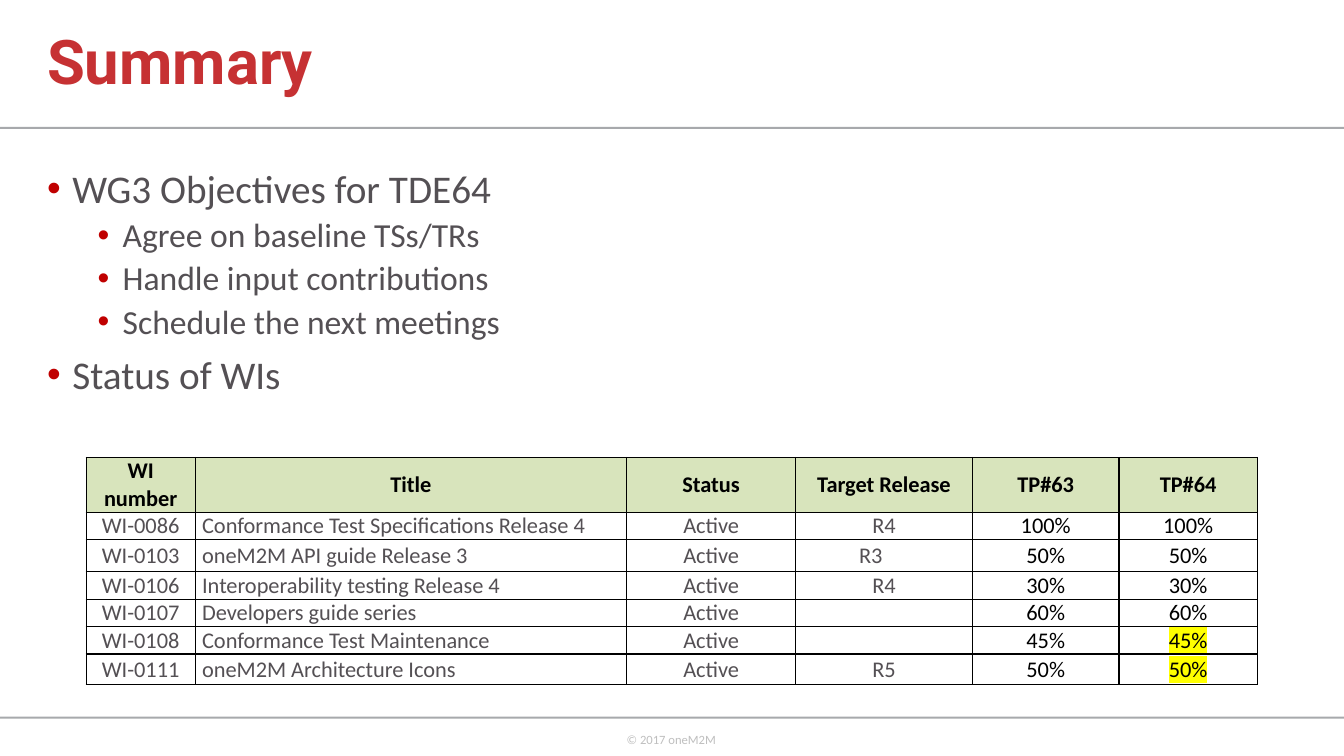
from dataclasses import dataclass

from lxml.etree import SubElement
from pptx import Presentation
from pptx.dml.color import RGBColor
from pptx.enum.shapes import MSO_SHAPE as Preset
from pptx.enum.text import MSO_ANCHOR as Anchor, PP_ALIGN as Align
from pptx.oxml import parse_xml
from pptx.oxml.ns import nsdecls, qn
from pptx.util import Pt

COLORS = {
    "rule": "A7A9AC", "footer": "BFBFBF", "title": "C63133", "text": "545054",
    "bullet": "C00000", "header": "D8E4BC", "white": "FFFFFF",
    "black": "000000", "highlight": "FFFF00",
}
SLIDE_WIDTH, SLIDE_HEIGHT = 960, 540


@dataclass
class Style:
    size: float
    color: str
    name: str = "Calibri"
    bold: bool = False
    highlight: bool = False


@dataclass
class Bullet:
    text: str
    level: int = 0


@dataclass
class WorkItem:
    number: str
    title: str
    release: str
    before: str
    after: str
    height: float = 19.6
    changed: bool = False
    release_shift: float = 0


BULLETS = [
    Bullet("WG3 Objectives for TDE64"),
    Bullet("Agree on baseline TSs/TRs", 1),
    Bullet("Handle input contributions", 1),
    Bullet("Schedule the next meetings", 1),
    Bullet("Status of WIs"),
]
HEADINGS = ["WI number", "Title", "Status", "Target Release", "TP#63", "TP#64"]
COLUMN_WIDTHS = [77.8, 308.2, 120.8, 126.2, 104.8, 98.7]
HEADER_HEIGHT = 39.2
WORK_ITEMS = [
    WorkItem("WI-0086", "Conformance Test Specifications Release 4", "R4", "100%", "100%"),
    WorkItem("WI-0103", "oneM2M API guide Release 3", "R3", "50%", "50%", 23, release_shift=19),
    WorkItem("WI-0106", "Interoperability testing Release 4", "R4", "30%", "30%"),
    WorkItem("WI-0107", "Developers guide series", "", "60%", "60%"),
    WorkItem("WI-0108", "Conformance Test Maintenance", "", "45%", "45%", changed=True),
    WorkItem("WI-0111", "oneM2M Architecture Icons", "R5", "50%", "50%", 22, changed=True),
]


def rgb(color: str) -> RGBColor:
    return RGBColor.from_string(COLORS[color])


def apply(target, values: dict) -> None:
    for name, value in values.items():
        setattr(target, name, value)


def add_run(paragraph, text: str, style: Style) -> None:
    run = paragraph.add_run()
    run.text = text
    run.font.color.rgb = rgb(style.color)
    apply(run.font, {"size": Pt(style.size), "name": style.name, "bold": style.bold})
    if style.highlight:
        mark = parse_xml(
            f'<a:highlight {nsdecls("a")}><a:srgbClr val="{COLORS["highlight"]}"/></a:highlight>')
        run.font._element.find(qn("a:solidFill")).addnext(mark)


def add_text_frame(slide, left: float, top: float, width: float, height: float,
                   wrap: bool = True, anchor=Anchor.TOP):
    box = slide.shapes.add_textbox(Pt(left), Pt(top), Pt(width), Pt(height))
    apply(box.text_frame, {"word_wrap": wrap, "vertical_anchor": anchor})
    return box.text_frame


def add_rule(slide, top: float) -> None:
    shape = slide.shapes.add_shape(Preset.RECTANGLE, 0, Pt(top), Pt(SLIDE_WIDTH), Pt(1.44))
    shape.shadow.inherit = False
    shape.fill.solid()
    shape.fill.fore_color.rgb = rgb("rule")
    shape.line.fill.background()


def add_bullet(paragraph, bullet: Bullet, first: bool) -> None:
    properties = paragraph._p.get_or_add_pPr()
    properties.set("marL", str(Pt(18 + 36 * bullet.level)))
    properties.set("indent", str(Pt(-18)))
    color = SubElement(properties, qn("a:buClr"))
    SubElement(color, qn("a:srgbClr"), val=COLORS["bullet"])
    SubElement(properties, qn("a:buFont"), typeface="Arial")
    SubElement(properties, qn("a:buChar"), char="•")
    space = 0 if first else 10 - 5 * bullet.level
    apply(paragraph, {"level": bullet.level, "line_spacing": 0.9, "space_before": Pt(space)})
    add_run(paragraph, bullet.text, Style(28 - 4 * bullet.level, "text"))


def fill_cell(cell, text: str, style: Style, fill: str, align, shift: float = 0) -> None:
    apply(cell, {"margin_left": Pt(5), "margin_right": Pt(5 + shift), "margin_top": 0,
                 "margin_bottom": 0, "vertical_anchor": Anchor.MIDDLE})
    paragraph = cell.text_frame.paragraphs[0]
    paragraph.alignment = align
    if text:
        add_run(paragraph, text, style)
    else:
        SubElement(paragraph._p, qn("a:endParaRPr"), sz=str(style.size * 100))
    # Borders come before the fill in the cell properties
    properties = cell._tc.get_or_add_tcPr()
    for side in ("lnL", "lnR", "lnT", "lnB"):
        line = SubElement(properties, qn(f"a:{side}"), w=str(Pt(1)))
        SubElement(SubElement(line, qn("a:solidFill")), qn("a:srgbClr"), val=COLORS["black"])
    cell.fill.solid()
    cell.fill.fore_color.rgb = rgb(fill)


def add_work_item_table(slide) -> None:
    heights = [HEADER_HEIGHT] + [item.height for item in WORK_ITEMS]
    frame = slide.shapes.add_table(len(heights), len(HEADINGS), Pt(61.6), Pt(326.7),
                                   Pt(sum(COLUMN_WIDTHS)), Pt(sum(heights)))
    table = frame.table
    for column, width in zip(table.columns, COLUMN_WIDTHS):
        column.width = Pt(width)
    for row, height in zip(table.rows, heights):
        row.height = Pt(height)

    for column, heading in enumerate(HEADINGS):
        fill_cell(table.cell(0, column), heading, Style(16, "black", bold=True),
                  "header", Align.CENTER)
    for row, item in enumerate(WORK_ITEMS, 1):
        texts = [item.number, item.title, "Active", item.release, item.before, item.after]
        for column, text in enumerate(texts):
            style = Style(16, "black" if column > 3 else "text",
                          highlight=item.changed and column == 5)
            fill_cell(table.cell(row, column), text, style, "white",
                      Align.LEFT if column == 1 else Align.CENTER,
                      item.release_shift if column == 3 else 0)


def main() -> None:
    presentation = Presentation()
    apply(presentation, {"slide_width": Pt(SLIDE_WIDTH), "slide_height": Pt(SLIDE_HEIGHT)})
    slide = presentation.slides.add_slide(presentation.slide_layouts[6])

    # Rules and footer
    for top in (90.7, 511.9):
        add_rule(slide, top)
    footer = add_text_frame(slide, 440.6, 519.1, 79.2, 28.8, wrap=False)
    add_run(footer.paragraphs[0], "© 2017 oneM2M", Style(9, "footer"))

    # Title
    title = add_text_frame(slide, 26.6, 0, 812.2, 92.2, anchor=Anchor.MIDDLE).paragraphs[0]
    title.line_spacing = 0.9
    add_run(title, "Summary", Style(44, "title", "Roboto", bold=True))

    # Objectives
    body = add_text_frame(slide, 26.6, 117.4, 828, 185.8)
    for index, bullet in enumerate(BULLETS):
        paragraph = body.add_paragraph() if index else body.paragraphs[0]
        add_bullet(paragraph, bullet, index == 0)

    # Work item status
    add_work_item_table(slide)
    presentation.save("out.pptx")


if __name__ == "__main__":
    main()
